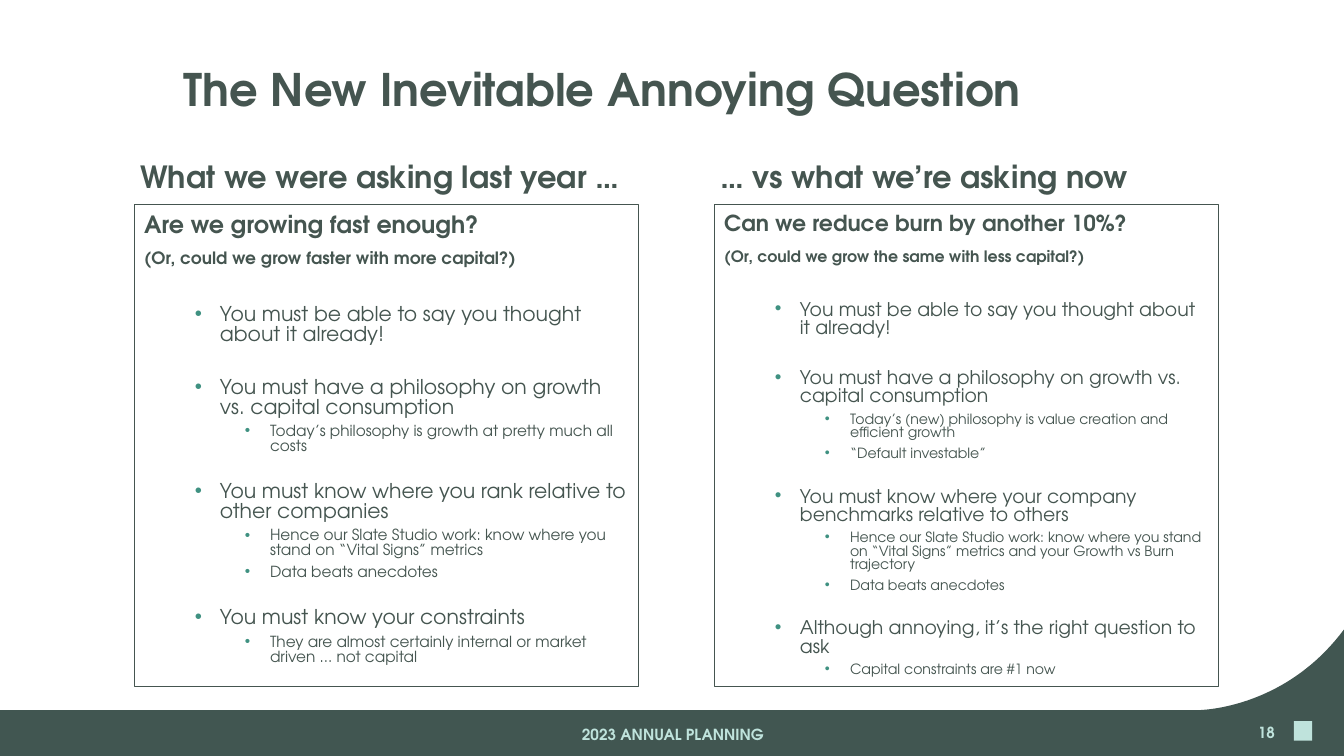
from lxml import etree
from pptx import Presentation
from pptx.dml.color import RGBColor
from pptx.enum.shapes import MSO_SHAPE
from pptx.enum.text import MSO_ANCHOR, PP_ALIGN
from pptx.oxml.ns import qn
from pptx.util import Inches, Pt

RECTANGLE = MSO_SHAPE.RECTANGLE
TOP, MIDDLE = MSO_ANCHOR.TOP, MSO_ANCHOR.MIDDLE
LEFT, CENTER, RIGHT = PP_ALIGN.LEFT, PP_ALIGN.CENTER, PP_ALIGN.RIGHT

FONT = "TeX Gyre Adventor"
INK, FOOTER, MINT, BULLET = "455550", "415651", "BFE3DC", "3F9181"
WIDTH, HEIGHT = 21.99, 12.37
COLUMN_LEFT, COLUMN_STEP, COLUMN_WIDTH = 2.2, 9.49, 8.25
HEADING_TOP, FRAME_TOP, FRAME_HEIGHT = 2.53, 3.35, 7.88
PAD_X, PAD_Y = 0.06, 0.12
LINE_SPACING, LINE_HEIGHT = 0.8, 0.98
NOTE_SPACE, BULLET_SPACE = 16.5, 8.2
INDENTS, HANGING = (1.24, 2.06), 0.41

COLUMNS = [
    {
        "heading": "What we were asking last year …",
        "question": "Are we growing fast enough?",
        "note": "(Or, could we grow faster with more capital?)",
        "sizes": (28, 20, 24, 18),
        "points": [
            ("You must be able to say you thought about it already!", []),
            ("You must have a philosophy on growth vs. capital consumption",
             ["Today’s philosophy is growth at pretty much all costs"]),
            ("You must know where you rank relative to other companies",
             ["Hence our Slate Studio work: know where you stand on “Vital Signs” metrics",
              "Data beats anecdotes"]),
            ("You must know your constraints",
             ["They are almost certainly internal or market driven ... not capital"]),
        ],
    },
    {
        "heading": "… vs what we’re asking now",
        "question": "Can we reduce burn by another 10%?",
        "note": "(Or, could we grow the same with less capital?)",
        "sizes": (25.9, 18.5, 22.2, 16.6),
        "points": [
            ("You must be able to say you thought about it already!", []),
            ("You must have a philosophy on growth vs. capital consumption",
             ["Today’s (new) philosophy is value creation and efficient growth",
              "“Default investable”"]),
            ("You must know where your company benchmarks relative to others",
             ["Hence our Slate Studio work: know where you stand on “Vital Signs” metrics "
              "and your Growth vs Burn trajectory",
              "Data beats anecdotes"]),
            ("Although annoying, it’s the right question to ask",
             ["Capital constraints are #1 now"]),
        ],
    },
]


def color(value):
    return RGBColor.from_string(value)


def add_frame(slide, left, top, width, height, fill=None, line=None):
    frame = slide.shapes.add_shape(RECTANGLE, *map(Inches, (left, top, width, height)))
    paint(frame, fill, line)


def paint(shape, fill=None, line=None):
    shape.shadow.inherit = False
    if fill:
        shape.fill.solid()
        shape.fill.fore_color.rgb = color(fill)
    else:
        shape.fill.background()
    if line:
        shape.line.color.rgb = color(line)
        shape.line.width = Pt(1)
    else:
        shape.line.fill.background()


def add_box(slide, left, top, width, height, anchor=TOP, inset=0.1):
    box = slide.shapes.add_textbox(*map(Inches, (left, top, width, height))).text_frame
    box.word_wrap = True
    box.vertical_anchor = anchor
    box.margin_left = Inches(inset)
    return box


def add_bullet(paragraph, level):
    properties = paragraph._p.get_or_add_pPr()
    properties.set("marL", str(Inches(INDENTS[level - 1])))
    properties.set("indent", str(-Inches(HANGING)))
    tint = etree.SubElement(properties, qn("a:buClr"))
    etree.SubElement(tint, qn("a:srgbClr"), val=BULLET)
    etree.SubElement(properties, qn("a:buFont"), typeface="Arial")
    etree.SubElement(properties, qn("a:buChar"), char="•")
    paragraph.level = level


def write(box, text, size, ink=INK, bold=True, align=LEFT, level=0, before=0, spacing=1.0):
    first = box.paragraphs[0]
    paragraph = box.add_paragraph() if first.runs else first
    if level:
        add_bullet(paragraph, level)
    paragraph.alignment = align
    paragraph.line_spacing = spacing
    paragraph.space_before = Pt(before)
    run = paragraph.add_run()
    run.text = text
    run.font.name = FONT
    run.font.size = Pt(size)
    run.font.bold = bold
    run.font.color.rgb = color(ink)


def add_outline(slide, points, fill):
    start, *rest = [(Inches(x), Inches(y)) for x, y in points]
    outline = slide.shapes.build_freeform(*start, scale=1.0)
    outline.add_line_segments(rest)
    paint(outline.convert_to_shape(), fill)


def add_footer(slide):
    shoulder, bar_top, peak = 19.59, 11.62, 10.3
    steps = 40
    curve = []
    for step in range(1, steps + 1):
        t = step / steps
        weights = ((1 - t) ** 3, 3 * t * (1 - t) ** 2, 3 * t ** 2 * (1 - t), t ** 3)
        curve.append((
            sum(w * x for w, x in zip(weights, (shoulder, shoulder, 21, WIDTH))),
            sum(w * y for w, y in zip(weights, (bar_top, bar_top, 11.63, peak))),
        ))
    add_outline(slide, [(0, HEIGHT), (0, bar_top), (shoulder, bar_top),
                        *curve, (WIDTH, HEIGHT)], FOOTER)
    add_frame(slide, 21.17, 11.8, 0.3, 0.32, fill=MINT)

    caption = add_box(slide, 7.3, 11.68, 7.42, 0.66, MIDDLE)
    write(caption, "2023 ANNUAL PLANNING", 18, ink=MINT, align=CENTER)
    number = add_box(slide, 16.01, 11.66, 4.95, 0.66, MIDDLE)
    write(number, "18", 18, ink=MINT, align=RIGHT)


def add_column(slide, index, column):
    left = COLUMN_LEFT + index * COLUMN_STEP
    question_size, note_size, point_size, detail_size = column["sizes"]
    heading = add_box(slide, left, HEADING_TOP, COLUMN_WIDTH, 0.71)
    write(heading, column["heading"], 36)
    add_frame(slide, left, FRAME_TOP, COLUMN_WIDTH, FRAME_HEIGHT, line=INK)

    body = add_box(slide, left + PAD_X, FRAME_TOP + PAD_Y,
                   COLUMN_WIDTH - 2 * PAD_X, FRAME_HEIGHT - 2 * PAD_Y)
    write(body, column["question"], question_size, spacing=LINE_SPACING)
    write(body, column["note"], note_size, before=NOTE_SPACE, spacing=LINE_SPACING)
    gap = LINE_HEIGHT * note_size + NOTE_SPACE + BULLET_SPACE
    for point, details in column["points"]:
        write(body, point, point_size, bold=False, level=1, before=gap, spacing=LINE_SPACING)
        for detail in details:
            write(body, detail, detail_size, bold=False, level=2,
                  before=BULLET_SPACE, spacing=LINE_SPACING)
        last_size = detail_size if details else point_size
        gap = LINE_HEIGHT * last_size + 2 * BULLET_SPACE


def main():
    deck = Presentation()
    deck.slide_width, deck.slide_height = Inches(WIDTH), Inches(HEIGHT)
    slide = deck.slides.add_slide(deck.slide_layouts[6])
    add_footer(slide)
    title = add_box(slide, 3.01, 1.05, 17.65, 0.9, MIDDLE, inset=0)
    write(title, "The New Inevitable Annoying Question", 52.8, spacing=0.9)
    for index, column in enumerate(COLUMNS):
        add_column(slide, index, column)
    deck.save("out.pptx")


if __name__ == "__main__":
    main()
